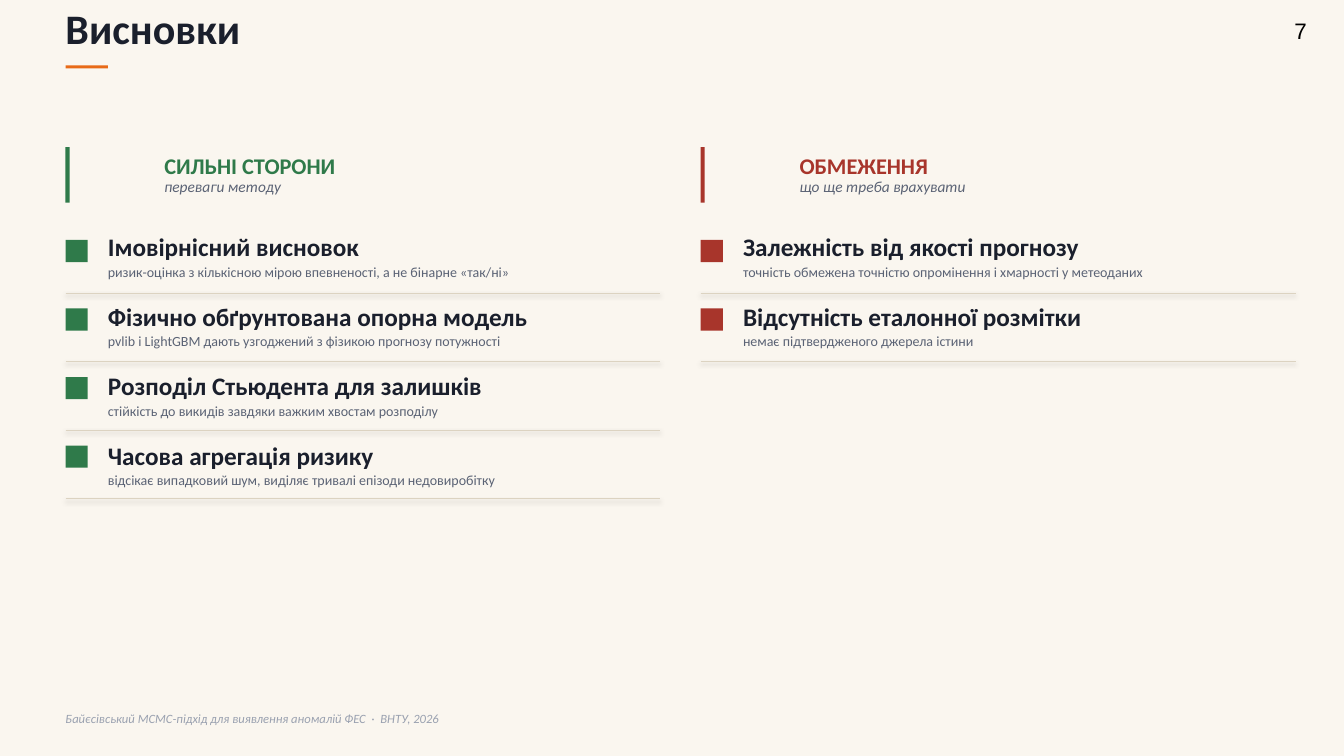
from pptx import Presentation
from pptx.dml.color import RGBColor
from pptx.enum.shapes import MSO_CONNECTOR, MSO_SHAPE
from pptx.enum.text import MSO_AUTO_SIZE, PP_ALIGN
from pptx.util import Inches, Pt

CREAM = RGBColor(0xFA, 0xF6, 0xEF)
INK = RGBColor(0x1A, 0x1F, 0x2C)
SLATE = RGBColor(0x5B, 0x63, 0x75)
MIST = RGBColor(0x9A, 0xA1, 0xB0)
SAND = RGBColor(0xDC, 0xD3, 0xC1)
ORANGE = RGBColor(0xE8, 0x6A, 0x17)
GREEN = RGBColor(0x2F, 0x7A, 0x4A)
RED = RGBColor(0xA8, 0x35, 0x2B)
BLACK = RGBColor(0, 0, 0)

# Vertical pitch of the item marks and of their text
MARK_STEP = 0.68
TEXT_STEP = 0.69

PROS = [
    ("Імовірнісний висновок",
     "ризик-оцінка з кількісною мірою впевненості, а не бінарне «так/ні»"),
    ("Фізично обґрунтована опорна модель",
     "pvlib і LightGBM дають узгоджений з фізикою прогнозу потужності"),
    ("Розподіл Стьюдента для залишків",
     "стійкість до викидів завдяки важким хвостам розподілу"),
    ("Часова агрегація ризику",
     "відсікає випадковий шум, виділяє тривалі епізоди недовиробітку"),
]
CONS = [
    ("Залежність від якості прогнозу",
     "точність обмежена точністю опромінення і хмарності у метеоданих"),
    ("Відсутність еталонної розмітки",
     "немає підтвердженого джерела істини"),
]


def add_text(slide, box, text, size, color, pad=0, lead=None, align=None,
             **style):
    shape = slide.shapes.add_textbox(*map(Inches, box))
    frame = shape.text_frame
    sides = {"margin_left": 2 * pad, "margin_right": 2 * pad,
             "margin_top": pad, "margin_bottom": pad}
    for name, value in sides.items():
        setattr(frame, name, Inches(value))
    frame.word_wrap = True
    frame.auto_size = MSO_AUTO_SIZE.SHAPE_TO_FIT_TEXT
    para = frame.paragraphs[0]
    para.alignment = align
    para.line_spacing = lead
    run = para.add_run()
    run.text = text
    font = {"name": "Calibri", "size": Pt(size), **style}
    for name, value in font.items():
        setattr(run.font, name, value)
    run.font.color.rgb = color


def add_block(slide, box, color):
    block = slide.shapes.add_shape(MSO_SHAPE.RECTANGLE, *map(Inches, box))
    block.shadow.inherit = False
    block.fill.solid()
    block.fill.fore_color.rgb = color
    block.line.fill.background()


def add_rule(slide, left, top, width):
    # The theme gives the rule its soft shadow
    rule = slide.shapes.add_connector(
        MSO_CONNECTOR.STRAIGHT,
        *map(Inches, (left, top, left + width, top)))
    rule.line.color.rgb = SAND
    rule.line.width = Pt(0.75)


def add_title(slide, left, top, width):
    add_text(slide, (left, top, width, 0.5), "Висновки", 30, INK, bold=True)
    add_block(slide, (left, top + 0.62, 0.42, 0.03), ORANGE)


def add_column(slide, left, top, width, color, head, note, items):
    # Heading with side bar
    add_block(slide, (left, top, 0.04, 0.55), color)
    add_text(slide, (left + 0.98, top + 0.05, 4, 0.27), head, 16, color,
             bold=True)
    add_text(slide, (left + 0.98, top + 0.3, 4, 0.32), note, 11, SLATE,
             italic=True)
    # Items, each closed by a rule
    for i, (claim, detail) in enumerate(items):
        mark = top + 0.92 + i * MARK_STEP
        line = top + 0.82 + i * TEXT_STEP
        add_block(slide, (left, mark, 0.22, 0.22), color)
        add_text(slide, (left + 0.42, line, 5.5, 0.32), claim, 18, INK,
                 lead=1.05, bold=True)
        add_text(slide, (left + 0.42, line + 0.3, 5.5, 0.2), detail, 10,
                 SLATE, lead=1.18)
        add_rule(slide, left, mark + 0.53, width)


def add_footer(slide, left, top, width):
    add_text(slide, (left, top, width, 0.3),
             "Байєсівський MCMC-підхід для виявлення аномалій ФЕС  ·  ВНТУ, 2026",
             9, MIST, italic=True)


def add_number(slide, left, top, width):
    add_text(slide, (left, top, width, 0.37), "7", 16, BLACK, pad=0.05,
             align=PP_ALIGN.CENTER, name="Arial")


def main():
    deck = Presentation()
    deck.slide_width = Inches(13.33)
    deck.slide_height = Inches(7.5)
    slide = deck.slides.add_slide(deck.slide_layouts[6])
    slide.background.fill.solid()
    slide.background.fill.fore_color.rgb = CREAM

    add_title(slide, 0.65, 0.03, 12)
    add_column(slide, 0.65, 1.46, 5.9, GREEN,
               "СИЛЬНІ СТОРОНИ", "переваги методу", PROS)
    add_column(slide, 6.95, 1.46, 5.9, RED,
               "ОБМЕЖЕННЯ", "що ще треба врахувати", CONS)
    add_footer(slide, 0.65, 7.05, 8)
    add_number(slide, 12.56, 0.12, 0.68)
    deck.save("out.pptx")


if __name__ == "__main__":
    main()
